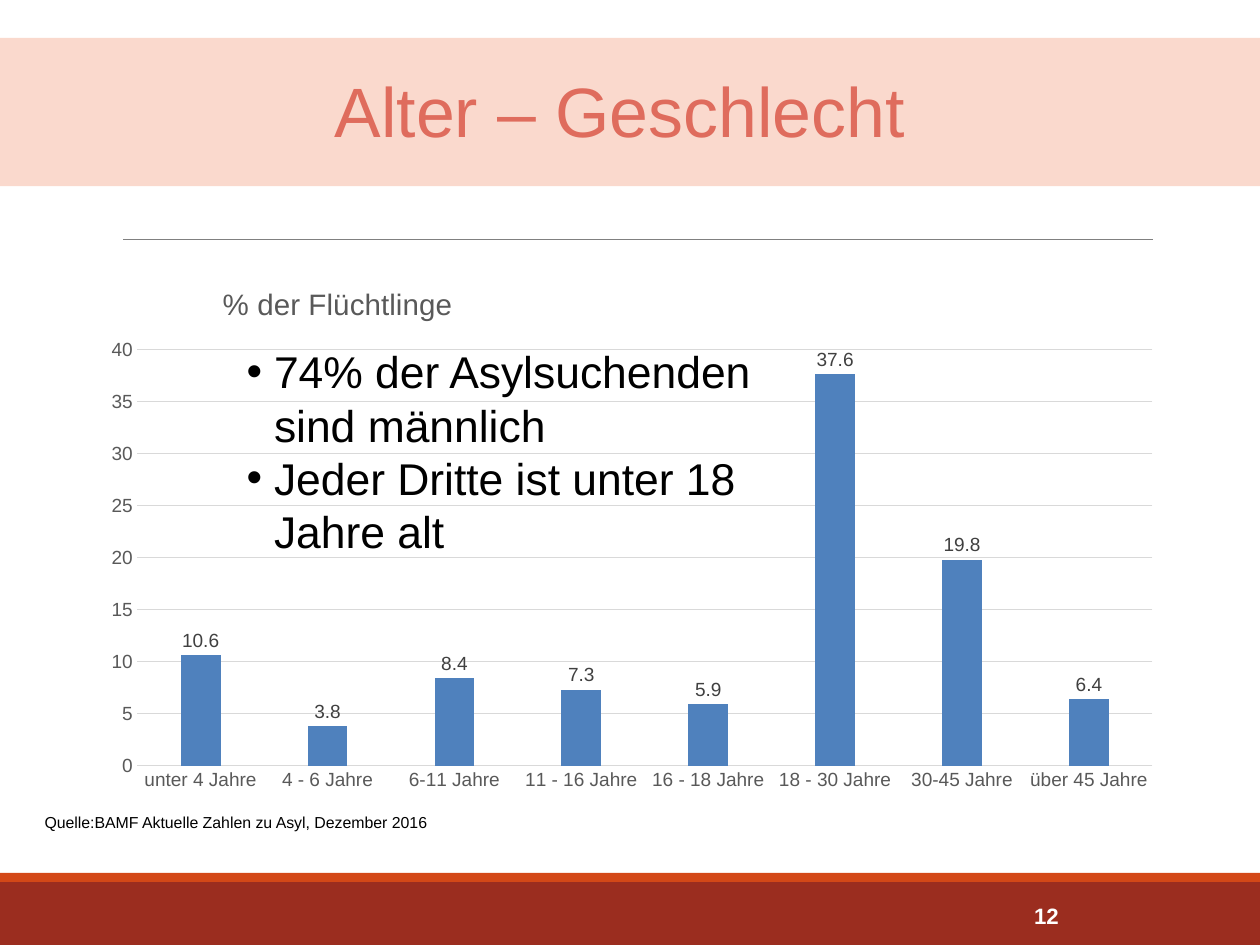
from dataclasses import dataclass

from lxml import etree
from pptx import Presentation
from pptx.chart.chart import Chart
from pptx.chart.data import CategoryChartData
from pptx.dml.color import RGBColor
from pptx.enum.chart import XL_CHART_TYPE, XL_LABEL_POSITION, XL_TICK_MARK
from pptx.enum.shapes import MSO_CONNECTOR, MSO_SHAPE
from pptx.enum.text import MSO_ANCHOR, MSO_AUTO_SIZE, PP_ALIGN
from pptx.oxml.ns import qn
from pptx.slide import Slide
from pptx.text.text import Font, TextFrame
from pptx.util import Emu, Pt

COLUMNS = XL_CHART_TYPE.COLUMN_CLUSTERED
OUTSIDE_END = XL_LABEL_POSITION.OUTSIDE_END
NO_TICK = XL_TICK_MARK.NONE
STRAIGHT = MSO_CONNECTOR.STRAIGHT
RECTANGLE = MSO_SHAPE.RECTANGLE
TOP, MIDDLE = MSO_ANCHOR.TOP, MSO_ANCHOR.MIDDLE
FIXED, GROW = MSO_AUTO_SIZE.NONE, MSO_AUTO_SIZE.SHAPE_TO_FIT_TEXT
LEFT, CENTER = PP_ALIGN.LEFT, PP_ALIGN.CENTER

FONT = "Arial"
EMU_PER_PX = 3600  # 100 px to the centimetre
SLIDE_WIDTH, SLIDE_HEIGHT = 2800, 2100
BULLET_INDENT = 61
COLORS = {
    "footer": "9B2D1F", "footer_edge": "D34817", "rule": "808080",
    "title_band": "FAD9CD", "title": "DF6C5D", "bar": "4F81BD",
    "grid": "D9D9D9", "axis_text": "595959", "label": "404040",
    "black": "000000", "white": "FFFFFF",
}
SHARES = {
    "unter 4 Jahre": 10.6, "4 - 6 Jahre": 3.8, "6-11 Jahre": 8.4,
    "11 - 16 Jahre": 7.3, "16 - 18 Jahre": 5.9, "18 - 30 Jahre": 37.6,
    "30-45 Jahre": 19.8, "über 45 Jahre": 6.4,
}
CHART_TITLE = "% der Flüchtlinge"


@dataclass(frozen=True)
class Box:
    left: int
    top: int
    width: int
    height: int

    def emu(self) -> tuple[Emu, Emu, Emu, Emu]:
        return px(self.left), px(self.top), px(self.width), px(self.height)


@dataclass(frozen=True)
class Band:
    box: Box
    color: str


FOOTER_BANDS = (
    Band(Box(0, 1960, SLIDE_WIDTH, 140), "footer"),
    Band(Box(0, 1940, SLIDE_WIDTH, 20), "footer_edge"),
)
TITLE_BAND = Band(Box(0, 84, SLIDE_WIDTH, 330), "title_band")
CHART_BOX = Box(201, 579, 2408, 1201)
PLOT_BOX = Box(104, 198, 2256, 925)  # inside the chart
HEADING_LEFT, HEADING_TOP = 282, 42  # inside the chart


def px(length: int) -> Emu:
    return Emu(length * EMU_PER_PX)


def rgb(color: str) -> RGBColor:
    return RGBColor.from_string(COLORS[color])


def style_font(font: Font, size: float, color: str, bold: bool = False) -> None:
    font.name, font.size, font.bold = FONT, Pt(size), bold
    font.color.rgb = rgb(color)


def add_bullet(properties: etree._Element, bullet: str) -> None:
    properties.set("marL", str(px(BULLET_INDENT)))
    properties.set("indent", str(px(-BULLET_INDENT)))
    color = etree.SubElement(properties, qn("a:buClr"))
    etree.SubElement(color, qn("a:srgbClr")).set("val", COLORS["black"])
    etree.SubElement(properties, qn("a:buFont")).set("typeface", FONT)
    etree.SubElement(properties, qn("a:buChar")).set("char", bullet)


def write_text(frame: TextFrame, *lines: str, size: float, color: str = "black",
               bold: bool = False, align: PP_ALIGN = LEFT,
               anchor: MSO_ANCHOR = TOP, spacing: float = 1.0, bullet: str = "",
               fit: MSO_AUTO_SIZE = FIXED,
               insets: tuple[int, int, int, int] = (25, 13, 25, 13)) -> None:
    frame.word_wrap, frame.auto_size = True, fit
    frame.vertical_anchor = anchor
    (frame.margin_left, frame.margin_top,
     frame.margin_right, frame.margin_bottom) = map(px, insets)
    for number, line in enumerate(lines):
        paragraph = frame.add_paragraph() if number else frame.paragraphs[0]
        paragraph.alignment, paragraph.line_spacing = align, spacing
        run = paragraph.add_run()
        run.text = line
        style_font(run.font, size, color, bold)
        if bullet:
            add_bullet(paragraph._p.get_or_add_pPr(), bullet)


def add_band(slide: Slide, band: Band) -> TextFrame:
    rectangle = slide.shapes.add_shape(RECTANGLE, *band.box.emu())
    rectangle.shadow.inherit = False
    rectangle.fill.solid()
    rectangle.fill.fore_color.rgb = rgb(band.color)
    rectangle.line.fill.background()
    return rectangle.text_frame


def add_text_frame(slide: Slide, box: Box) -> TextFrame:
    return slide.shapes.add_textbox(*box.emu()).text_frame


def add_rule(slide: Slide) -> None:
    rule = slide.shapes.add_connector(STRAIGHT, px(274), px(532), px(2563), px(532))
    rule.line.color.rgb = rgb("rule")
    rule.line.width = Pt(0.5)
    etree.SubElement(rule._element.spPr, qn("a:effectLst"))


def set_layout(parent: etree._Element, index: int, **values: str | float) -> None:
    for old in parent.findall(qn("c:layout")):
        parent.remove(old)
    layout = etree.Element(qn("c:layout"))
    manual = etree.SubElement(layout, qn("c:manualLayout"))
    for tag, value in values.items():
        etree.SubElement(manual, qn(f"c:{tag}")).set("val", str(value))
    parent.insert(index, layout)


def style_axes(chart: Chart) -> None:
    ages, percent = chart.category_axis, chart.value_axis
    for axis in (ages, percent):
        axis.major_tick_mark = axis.minor_tick_mark = NO_TICK
        style_font(axis.tick_labels.font, 12, "axis_text")
    percent.minimum_scale, percent.maximum_scale, percent.major_unit = 0, 40, 5
    percent.has_major_gridlines = True
    percent.format.line.fill.background()
    for line in (ages.format.line, percent.major_gridlines.format.line):
        line.color.rgb = rgb("grid")
        line.width = Pt(0.75)


def add_age_chart(slide: Slide) -> None:
    data = CategoryChartData()
    data.categories = list(SHARES)
    data.add_series(CHART_TITLE, list(SHARES.values()))
    chart = slide.shapes.add_chart(COLUMNS, *CHART_BOX.emu(), data).chart
    style_font(chart.font, 10, "black")
    chart.has_legend = False
    style_axes(chart)

    # Bars and their values
    plot = chart.plots[0]
    plot.vary_by_categories = False
    plot.gap_width, plot.overlap = 219, -27
    bars = plot.series[0]
    bars.format.fill.solid()
    bars.format.fill.fore_color.rgb = rgb("bar")
    labels = bars.data_labels
    labels.show_value = True
    labels.position = OUTSIDE_END
    style_font(labels.font, 12, "label")

    # Title and plot placement, as shares of the chart
    chart.has_title = True
    heading = chart.chart_title.text_frame.paragraphs[0].add_run()
    heading.text = CHART_TITLE
    style_font(heading.font, 18.6, "axis_text")
    title = chart.chart_title.element
    width, height = CHART_BOX.width, CHART_BOX.height
    set_layout(title, 1, xMode="edge", yMode="edge",
               x=HEADING_LEFT / width, y=HEADING_TOP / height)
    set_layout(title.getparent().find(qn("c:plotArea")), 0, layoutTarget="inner",
               xMode="edge", yMode="edge",
               x=PLOT_BOX.left / width, y=PLOT_BOX.top / height,
               w=PLOT_BOX.width / width, h=PLOT_BOX.height / height)


def main() -> None:
    deck = Presentation()
    deck.slide_width, deck.slide_height = px(SLIDE_WIDTH), px(SLIDE_HEIGHT)
    slide = deck.slides.add_slide(deck.slide_layouts[6])

    # Footer, rule and chart
    for band in FOOTER_BANDS:
        add_band(slide, band)
    add_rule(slide)
    add_age_chart(slide)

    # Texts; the closing space shifts the centred title slightly left
    write_text(add_band(slide, TITLE_BAND), "Alter – Geschlecht ", size=44,
               color="title", align=CENTER, anchor=MIDDLE, spacing=0.93,
               insets=(0, 10, 0, 0))
    write_text(add_text_frame(slide, Box(2273, 1978, 300, 112)), "12", size=14,
               color="white", bold=True, anchor=MIDDLE)
    write_text(add_text_frame(slide, Box(548, 757, 1219, 546)),
               "74% der Asylsuchenden sind männlich",
               "Jeder Dritte ist unter 18 Jahre alt",
               size=28, bullet="•", insets=(0, 8, 0, 0))
    write_text(add_text_frame(slide, Box(74, 1792, 1605, 69)),
               "Quelle:BAMF Aktuelle Zahlen zu Asyl, Dezember 2016", size=10, fit=GROW)

    deck.save("out.pptx")


if __name__ == "__main__":
    main()
